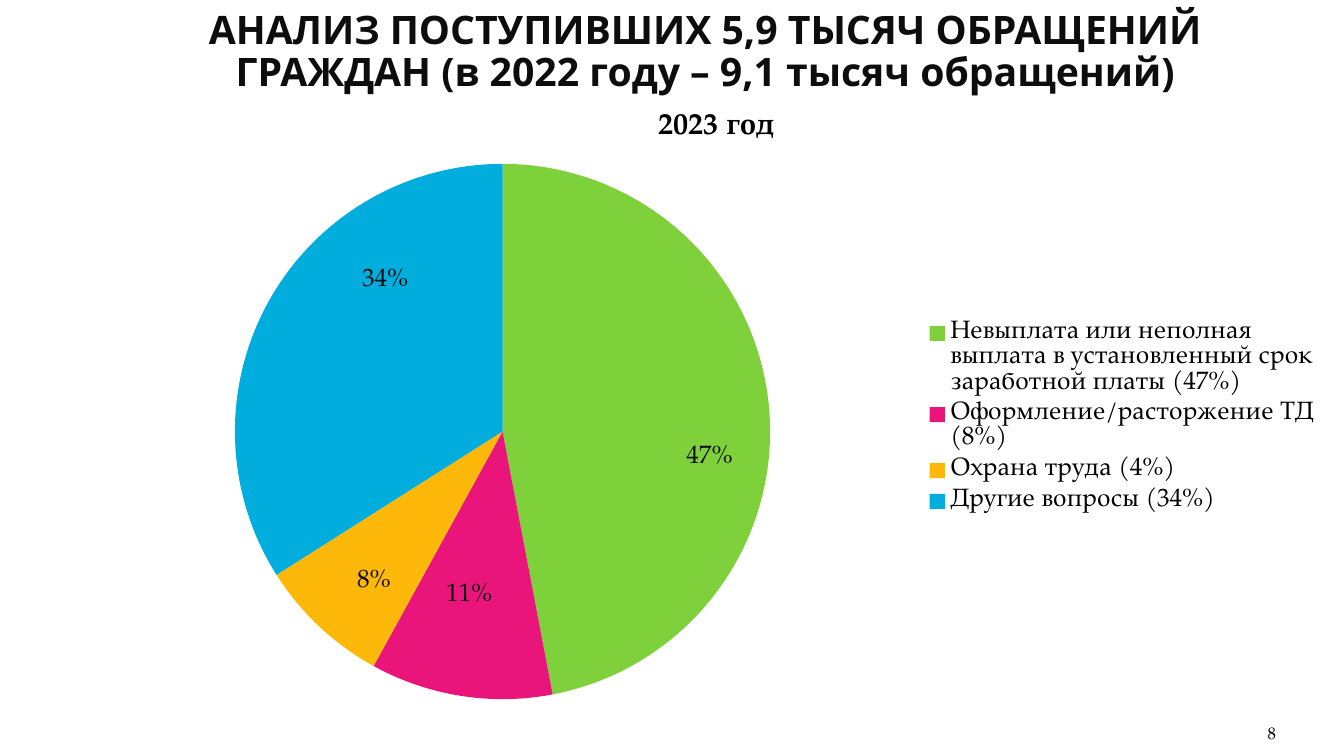
from dataclasses import dataclass

from lxml import etree
from pptx import Presentation
from pptx import util as u
from pptx.chart.data import CategoryChartData
from pptx.dml.color import RGBColor
from pptx.enum import chart as charts, text
from pptx.oxml.ns import qn

SERIF = "TeX Gyre Pagella"
SANS = "Open Sans"
BLACK = "000000"
DARK = "0D0D0D"


@dataclass
class Topic:
    name: str
    share: float
    color: str
    label_dx: float  # label shift from the slice centre, share of chart size
    label_dy: float


TOPICS = [
    Topic("Невыплата или неполная выплата в установленный срок заработной платы (47%)",
          0.47, "7FD13B", 0.06, 0.06),
    Topic("Оформление/расторжение ТД (8%)", 0.11, "EA157A", -0.01, 0.05),
    Topic("Охрана труда (4%)", 0.08, "FEB80A", -0.03, 0.08),
    Topic("Другие вопросы (34%)", 0.34, "00ADDC", 0, -0.13),
]


def style_font(font, name: str, size: float, color: str, bold: bool = False) -> None:
    font.name = name
    font.size = u.Pt(size)
    font.bold = bold
    font.color.rgb = RGBColor.from_string(color)


def set_layout(parent, index: int, **values) -> None:
    """Give a chart part a manual layout, as shares of the chart size."""
    for old in parent.findall(qn("c:layout")):
        parent.remove(old)
    layout = etree.Element(qn("c:layout"))
    manual = etree.SubElement(layout, qn("c:manualLayout"))
    for tag, value in values.items():
        etree.SubElement(manual, qn(f"c:{tag}")).set("val", str(value))
    parent.insert(index, layout)


def add_title(page) -> None:
    box = page.shapes.title
    box.left, box.top, box.width, box.height = u.Cm(3.38), u.Cm(0.33), u.Cm(28.78), u.Cm(2.01)
    frame = box.text_frame
    frame.text = "АНАЛИЗ ПОСТУПИВШИХ 5,9 ТЫСЯЧ ОБРАЩЕНИЙ ГРАЖДАН (в 2022 году – 9,1 тысяч обращений)"
    frame.word_wrap = True
    frame.auto_size = text.MSO_AUTO_SIZE.NONE
    frame.vertical_anchor = text.MSO_ANCHOR.MIDDLE
    para = frame.paragraphs[0]
    para.alignment = text.PP_ALIGN.CENTER
    para.line_spacing = 0.9
    style_font(para.runs[0].font, SANS, 28, DARK, True)


def add_pie(page) -> None:
    data = CategoryChartData(number_format="0%")
    data.categories = [topic.name for topic in TOPICS]
    data.add_series("Series 1", [topic.share for topic in TOPICS])
    chart = page.shapes.add_chart(charts.XL_CHART_TYPE.PIE, u.Cm(2.54), u.Cm(2.13),
                                  u.Cm(31.01), u.Cm(16.61), data).chart
    style_font(chart.font, SERIF, 18, BLACK)

    # Heading and legend
    chart.has_title = True
    heading = chart.chart_title.text_frame
    heading.text = "2023 год"
    style_font(heading.paragraphs[0].runs[0].font, SERIF, 21.6, BLACK, True)
    chart.has_legend = True
    chart.legend.position = charts.XL_LEGEND_POSITION.RIGHT
    chart.legend.include_in_layout = False
    style_font(chart.legend.font, SERIF, 18, BLACK)

    # Slices and their labels
    plot = chart.plots[0]
    plot.vary_by_categories = True
    series = plot.series[0]
    labels = series.data_labels
    labels.show_value = True
    labels.number_format = "0%"
    labels.number_format_is_linked = False
    style_font(labels.font, SERIF, 18, DARK)
    for index, topic in enumerate(TOPICS):
        point = series.points[index]
        point.format.fill.solid()
        point.format.fill.fore_color.rgb = RGBColor.from_string(topic.color)
        style_font(point.data_label.font, SERIF, 18, DARK)
        point.data_label.position = charts.XL_LABEL_POSITION.CENTER

    # Places inside the chart
    root = chart.element
    set_layout(root.find(".//" + qn("c:plotArea")), 0, layoutTarget="inner",
               xMode="edge", yMode="edge", x=0.109, y=0.12, w=0.435, h=0.813)
    set_layout(root.find(".//" + qn("c:legend")), 1,
               xMode="edge", yMode="edge", x=0.67, y=0.35, w=0.32, h=0.31)
    for label, topic in zip(root.iter(qn("c:dLbl")), TOPICS):
        set_layout(label, 1, x=topic.label_dx, y=topic.label_dy)


def add_page_number(page) -> None:
    box = page.shapes.add_textbox(u.Cm(29.34), u.Cm(17.83), u.Cm(2.82), u.Cm(1.02))
    frame = box.text_frame
    frame.text = "8"
    frame.word_wrap = True
    frame.margin_left = frame.margin_right = 0
    frame.vertical_anchor = text.MSO_ANCHOR.BOTTOM
    para = frame.paragraphs[0]
    para.alignment = text.PP_ALIGN.RIGHT
    style_font(para.runs[0].font, SERIF, 12, BLACK)


def main() -> None:
    deck = Presentation()
    deck.slide_width, deck.slide_height = u.Cm(33.87), u.Cm(19.05)
    page = deck.slides.add_slide(deck.slide_layouts[5])
    add_title(page)
    add_pie(page)
    add_page_number(page)
    deck.save("out.pptx")


if __name__ == "__main__":
    main()
